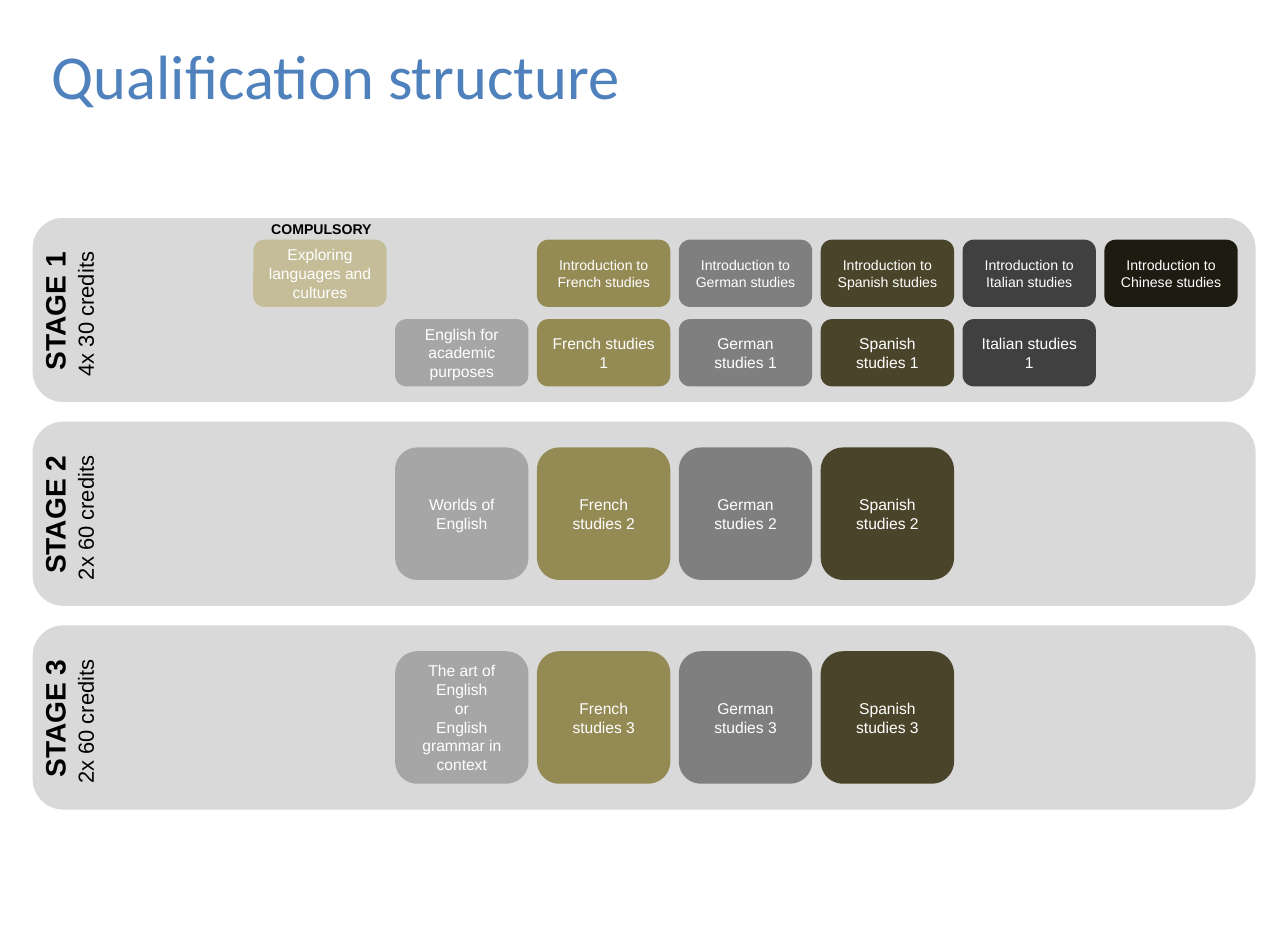
import pptx
import pptx.dml.color
import pptx.enum.shapes
import pptx.enum.text
import pptx.util

SUBJECTS = ["Exploring", "English", "French", "German", "Spanish", "Italian", "Chinese"]
COLOURS = ["C4BD97", "A6A6A6", "948A54", "7F7F7F", "4A452A", "404040", "1E1C11"]
CREDITS = ["4x 30 credits", "2x 60 credits", "2x 60 credits"]
ENGLISH = ["English for academic purposes", "Worlds of English",
           "The art of English\nor\nEnglish grammar in context"]


def rgb(value):
    return pptx.dml.color.RGBColor.from_string(value)


class StageChart:
    """Draws on a slide whose columns are subjects and whose rows are stages."""

    left, top, col, row = 2.25, 1.93, 1.26, 1.81
    font, ink, paper, band = "Arial", "000000", "FFFFFF", "D9D9D9"
    card_width, half_card, full_card = 0.94, 0.33, 0.65

    def __init__(self, prs):
        self.s = prs.slides.add_slide(prs.slide_layouts[5])

    def box(self, col, row, width, height):
        return [pptx.util.Inches(n) for n in (
            self.left + col * self.col, self.top + row * self.row,
            width * self.col, height * self.row)]

    def set_text(self, tf, text, size, colour, font=None, bold=False, align="CENTER"):
        tf.text = text
        for p in tf.paragraphs:
            p.alignment = pptx.enum.text.PP_ALIGN[align]
            p.font.name = font or self.font
            p.font.size = pptx.util.Pt(size)
            p.font.bold = bold
            p.font.color.rgb = rgb(colour)

    def title(self, text):
        sp = self.s.shapes.title
        sp.left, sp.top, sp.width, sp.height = self.box(-1.5, -0.91, 8.17, 0.42)
        sp.text_frame.vertical_anchor = pptx.enum.text.MSO_ANCHOR.MIDDLE
        self.set_text(sp.text_frame, text, 40, "4F81BD", "Calibri", align="LEFT")

    def rounded(self, fill, *place):
        sp = self.s.shapes.add_shape(
            pptx.enum.shapes.MSO_SHAPE.ROUNDED_RECTANGLE, *self.box(*place))
        sp.shadow.inherit = False
        sp.fill.solid()
        sp.fill.fore_color.rgb = rgb(fill)
        sp.line.fill.background()
        return sp

    def panel(self, stage):
        sp = self.rounded(self.band, -1.56, stage, 8.63, 0.91)
        sp.line.color.rgb = rgb(self.paper)
        sp.line.width = pptx.util.Pt(0.75)

    def card(self, text, subject, row, height, size=10):
        sp = self.rounded(COLOURS[subject], subject, row, self.card_width, height)
        tf = sp.text_frame
        tf.word_wrap = True
        tf.vertical_anchor = pptx.enum.text.MSO_ANCHOR.MIDDLE
        self.set_text(tf, text, size, self.paper)

    def label(self, text, size, *place, bold=False):
        sp = self.s.shapes.add_textbox(*self.box(*place))
        sp.text_frame.word_wrap = False
        self.set_text(sp.text_frame, text, size, self.ink, bold=bold)
        return sp

    def stage_label(self, stage):
        sp = self.label(f"STAGE {stage + 1}", 18, -1.56, stage + 0.01, 0.4, 0.9, bold=True)
        sp.text_frame._txBody.bodyPr.set("vert", "vert270")
        self.label(CREDITS[stage], 14, -1.71, stage + 0.38, 1.06, 0.19).rotation = 270


def main():
    prs = pptx.Presentation()
    prs.slide_width = pptx.util.Inches(11.44)
    prs.slide_height = pptx.util.Inches(8.27)
    chart = StageChart(prs)
    chart.title("Qualification structure")

    for stage in range(3):
        chart.panel(stage)
        chart.stage_label(stage)
        row, height = (0.5, chart.half_card) if stage == 0 else (0.13, chart.full_card)
        last = 6 if stage == 0 else 5
        for subject in range(1, last):
            text = ENGLISH[stage] if subject == 1 else f"{SUBJECTS[subject]} studies {stage + 1}"
            chart.card(text, subject, stage + row, height)

    chart.label("COMPULSORY", 9, -0.02, -0.01, 1, 0.14, bold=True)
    chart.card("Exploring languages and cultures", 0, 0.11, chart.half_card)
    for subject in range(2, 7):
        chart.card(f"Introduction to {SUBJECTS[subject]} studies", subject, 0.11,
                   chart.half_card, size=9)
    prs.save("out.pptx")


if __name__ == "__main__":
    main()
